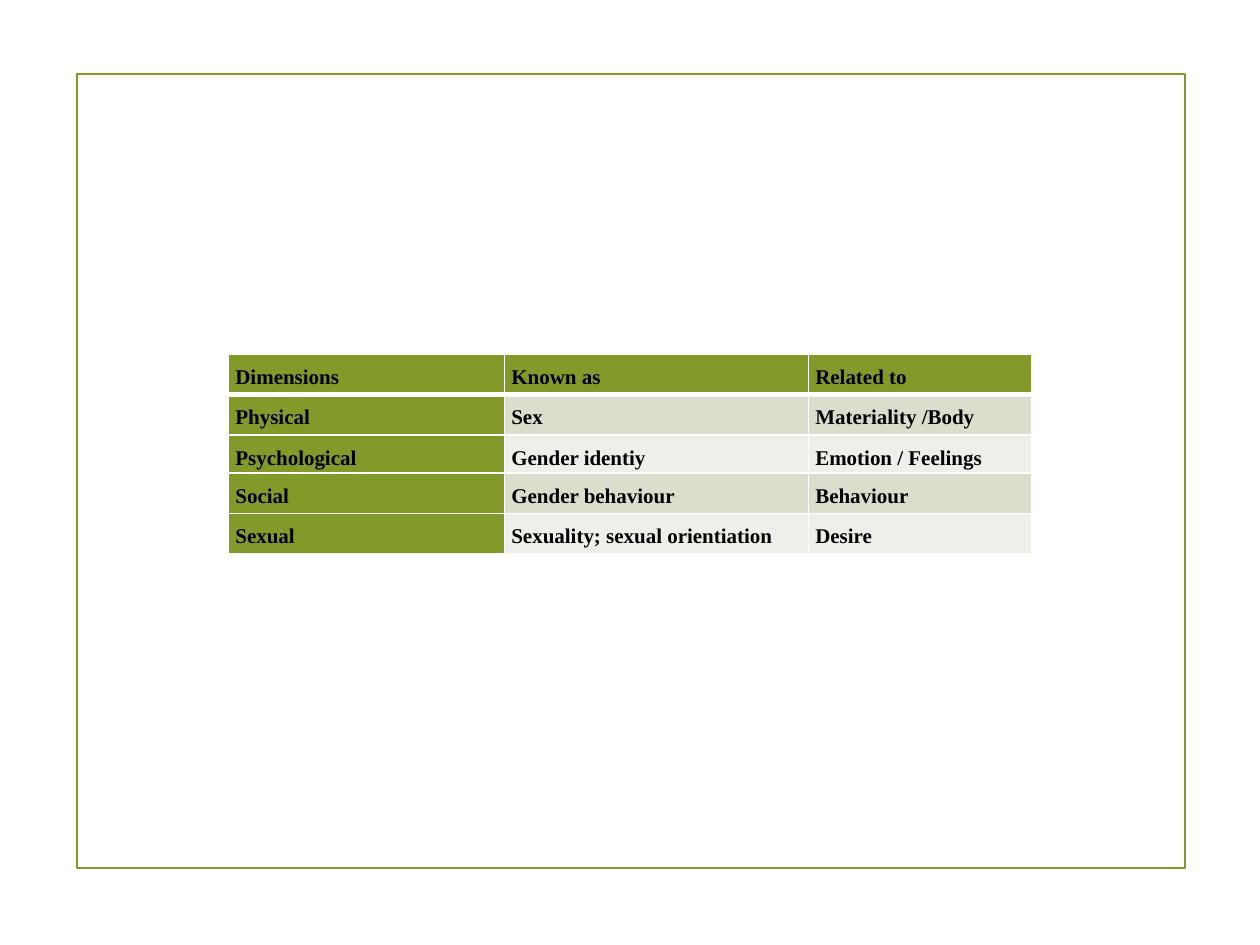
from lxml.etree import SubElement
from pptx import Presentation
from pptx.dml.color import RGBColor
from pptx.enum.shapes import MSO_SHAPE
from pptx.enum.text import PP_ALIGN
from pptx.oxml.ns import qn
from pptx.util import Pt

GREEN, WHITE, BLACK = "83992A", "FFFFFF", "000000"
BANDS = ("EDEFE8", "D9DECD")
ROWS = [
    ("Dimensions", "Known as", "Related to"),
    ("Physical", "Sex", "Materiality /Body"),
    ("Psychological", "Gender identiy", "Emotion / Feelings"),
    ("Social", "Gender behaviour", "Behaviour"),
    ("Sexual", "Sexuality; sexual orientiation", "Desire"),
]
COLUMN_WIDTHS = (157.7, 173.7, 127.7)
ROW_HEIGHTS = (23.2, 23.2, 21.6, 23.2, 23.2)


def color(value):
    return RGBColor.from_string(value)


def add_frame(page):
    frame = page.shapes.add_shape(
        MSO_SHAPE.RECTANGLE, Pt(44), Pt(42.5), Pt(633), Pt(453.5)
    )
    frame.shadow.inherit = False
    frame.fill.background()
    frame.line.color.rgb = color(GREEN)
    frame.line.width = Pt(1.25)


def set_border(cell, side, width):
    properties = cell._tc.get_or_add_tcPr()
    line = SubElement(properties, qn(f"a:ln{side}"), w=str(Pt(width)))
    fill = SubElement(line, qn("a:solidFill"))
    SubElement(fill, qn("a:srgbClr"), val=WHITE)


def format_cell(cell, text, row, column):
    cell.margin_left = cell.margin_right = Pt(4)
    cell.margin_top = cell.margin_bottom = 0
    for side in "LRTB":
        thick = (row, side) in ((0, "B"), (1, "T"))
        set_border(cell, side, 3 if thick else 1)
    cell.fill.solid()
    is_heading = row == 0 or column == 0
    cell.fill.fore_color.rgb = color(GREEN if is_heading else BANDS[row % 2])
    cell.text = text
    paragraph = cell.text_frame.paragraphs[0]
    paragraph.alignment = PP_ALIGN.JUSTIFY
    paragraph.line_spacing = 1.5
    paragraph.space_after = Pt(3)
    font = paragraph.font
    font.name = "Times New Roman"
    font.size = Pt(12)
    font.bold = True
    font.color.rgb = color(BLACK)


def add_dimension_table(page):
    table = page.shapes.add_table(
        len(ROWS), len(COLUMN_WIDTHS), Pt(130.5), Pt(202.3),
        Pt(sum(COLUMN_WIDTHS)), Pt(sum(ROW_HEIGHTS)),
    ).table
    for column, width in zip(table.columns, COLUMN_WIDTHS):
        column.width = Pt(width)
    for row, height in zip(table.rows, ROW_HEIGHTS):
        row.height = Pt(height)
    for row, texts in enumerate(ROWS):
        for column, text in enumerate(texts):
            format_cell(table.cell(row, column), text, row, column)


def main():
    deck = Presentation()
    deck.slide_width, deck.slide_height = Pt(720), Pt(540)
    page = deck.slides.add_slide(deck.slide_layouts[6])
    add_frame(page)
    add_dimension_table(page)
    deck.save("out.pptx")


if __name__ == "__main__":
    main()
